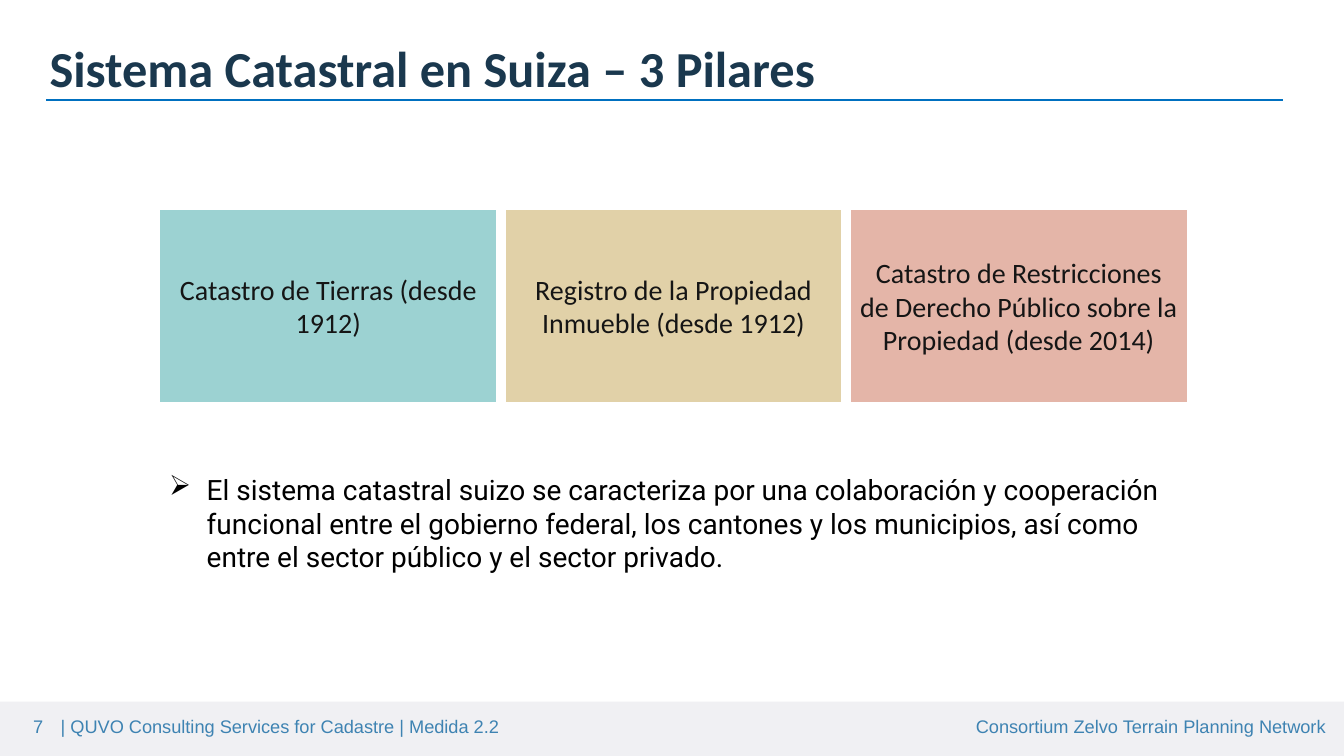
from pptx import Presentation
from pptx.dml.color import RGBColor
from pptx.enum.shapes import MSO_CONNECTOR as Connector, MSO_SHAPE as Shape
from pptx.enum.text import MSO_ANCHOR as Anchor, PP_ALIGN as Align
from pptx.oxml.ns import qn
from pptx.util import Cm, Pt
from lxml import etree


def rgb(value):
    return RGBColor.from_string(value)


def write(shape, text, font, size, color, align=Align.LEFT, bold=False,
          inset=0.08, anchor=Anchor.MIDDLE):
    """Fill a shape with one styled paragraph and return that paragraph."""
    frame = shape.text_frame
    frame.word_wrap = True
    frame.vertical_anchor = anchor
    frame.margin_left = frame.margin_right = Cm(inset)
    frame.margin_top = frame.margin_bottom = Cm(inset / 2)
    para = frame.paragraphs[0]
    para.text = text
    para.alignment = align
    para.font.name = font
    para.font.size = Pt(size)
    para.font.bold = bold
    para.font.color.rgb = rgb(color)
    return para


deck = Presentation()
deck.slide_width, deck.slide_height = Cm(33.87), Cm(19.05)
page = deck.slides.add_slide(deck.slide_layouts[6])
shapes = page.shapes

# Footer
band = shapes.add_shape(Shape.RECTANGLE, 0, Cm(17.68), deck.slide_width, Cm(1.37))
band.shadow.inherit = False
band.fill.solid()
band.fill.fore_color.rgb = rgb("F0F0F3")
band.line.fill.background()

footers = [
    (0.25, 1.42, "7", Align.CENTER),
    (1.45, 15.14, "| QUVO Consulting Services for Cadastre | Medida 2.2", Align.LEFT),
    (18.34, 15.14, "Consortium Zelvo Terrain Planning Network", Align.RIGHT),
]
for left, width, text, align in footers:
    box = shapes.add_textbox(Cm(left), Cm(17.96), Cm(width), Cm(0.69))
    write(box, text, "Arial", 13, "3E83B2", align)

# Title and rule
title = shapes.add_textbox(Cm(1.17), Cm(0.86), Cm(31.8), Cm(1.68))
write(title, "Sistema Catastral en Suiza – 3 Pilares", "Calibri", 36, "1A384E", bold=True)

rule = shapes.add_connector(Connector.STRAIGHT, Cm(1.17), Cm(2.51), Cm(32.33), Cm(2.51))
rule.line.color.rgb = rgb("0070C0")
rule.line.width = Pt(1.5)
etree.SubElement(rule.element.spPr, qn("a:effectLst"))

# Pillars
pillars = [
    ("Catastro de Tierras (desde 1912)", "9CD2D2"),
    ("Registro de la Propiedad Inmueble (desde 1912)", "E1D1A8"),
    ("Catastro de Restricciones de Derecho Público sobre la Propiedad (desde 2014)", "E4B5A8"),
]
for index, (text, color) in enumerate(pillars):
    pillar = shapes.add_shape(Shape.RECTANGLE, Cm(4.01 + 8.7 * index), Cm(5.26),
                              Cm(8.53), Cm(4.9))
    pillar.shadow.inherit = False
    pillar.fill.solid()
    pillar.fill.fore_color.rgb = rgb(color)
    pillar.line.color.rgb = rgb("FFFFFF")
    pillar.line.width = Pt(2)
    write(pillar, text, "Calibri", 20, "151515", Align.CENTER, inset=0.25)

# Summary
summary = shapes.add_textbox(Cm(4.01), Cm(11.78), Cm(25.91), Cm(2.82))
para = write(
    summary,
    "El sistema catastral suizo se caracteriza por una colaboración y cooperación "
    "funcional entre el gobierno federal, los cantones y los municipios, así como "
    "entre el sector público y el sector privado.",
    "Roboto", 20, "000000", inset=0.25, anchor=Anchor.TOP)
para.space_after = Pt(6)
props = para._p.get_or_add_pPr()
props.set("marL", str(Cm(0.95)))
props.set("indent", str(-Cm(0.95)))
bullet = etree.Element(qn("a:buChar"), char="➢")
props.find(qn("a:defRPr")).addprevious(bullet)

deck.save("out.pptx")
